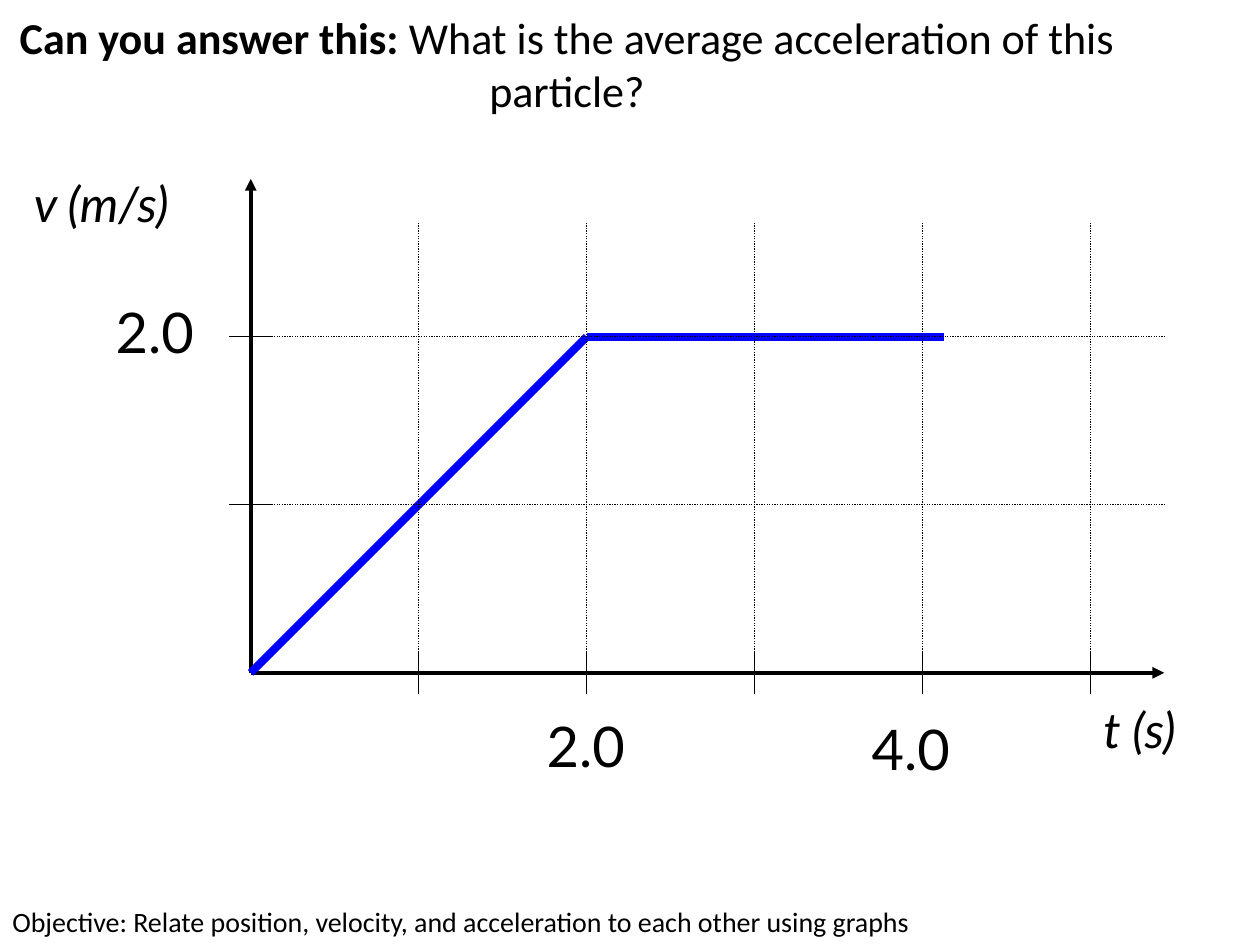
from lxml.etree import SubElement
from pptx import Presentation
from pptx.dml.color import RGBColor
from pptx.enum.dml import MSO_LINE_DASH_STYLE as Dash
from pptx.enum.shapes import MSO_CONNECTOR as Connector
from pptx.enum.text import MSO_ANCHOR as Anchor, PP_ALIGN as Align
from pptx.oxml.ns import qn
from pptx.util import Inches, Pt

COLORS = {"ink": "000000", "curve": "0000FF"}

ORIGIN_X, ORIGIN_Y = 1.99, 5.34
UNIT = 4 / 3
AXIS_RIGHT, AXIS_TOP, GRID_TOP = 9.24, 1.42, 1.76
TICK = 0.17

TICK_LABEL = {"name": "Lato", "size": Pt(32)}
AXIS_TITLE = {"name": "Lato", "size": Pt(28), "italic": True}
TITLE = {"name": "Calibri", "size": Pt(25.2)}
OBJECTIVE = {"name": "Calibri", "size": Pt(16)}


def time_x(seconds):
    return ORIGIN_X + seconds * UNIT


def velocity_y(speed):
    return ORIGIN_Y - speed * UNIT


def add_line(slide, start, end, color="ink", width=0.75, dash=None, arrow=False):
    line = slide.shapes.add_connector(
        Connector.STRAIGHT, *(Inches(value) for value in (*start, *end)))
    line.line.color.rgb = RGBColor.from_string(COLORS[color])
    line.line.width = Pt(width)
    if dash:
        line.line.dash_style = dash
    if arrow:
        SubElement(line.line._get_or_add_ln(), qn("a:tailEnd"), type="triangle")
    SubElement(line._element.spPr, qn("a:effectLst"))


def add_text(slide, box, runs, font, align=Align.LEFT, anchor=Anchor.TOP):
    """Add one paragraph; runs are pairs of text and extra font values."""
    shape = slide.shapes.add_textbox(*(Inches(value) for value in box))
    frame = shape.text_frame
    frame.word_wrap = True
    frame.vertical_anchor = anchor
    paragraph = frame.paragraphs[0]
    paragraph.alignment = align
    for text, extra in runs:
        run = paragraph.add_run()
        run.text = text
        for name, value in {**font, **extra}.items():
            setattr(run.font, name, value)
        run.font.color.rgb = RGBColor.from_string(COLORS["ink"])


def add_axes(slide):
    for end in ((ORIGIN_X, AXIS_TOP), (AXIS_RIGHT, ORIGIN_Y)):
        add_line(slide, (ORIGIN_X, ORIGIN_Y), end, width=2.25, arrow=True)


def add_ticks(slide):
    for speed in (1, 2):
        y = velocity_y(speed)
        add_line(slide, (ORIGIN_X - TICK, y), (ORIGIN_X + TICK, y))
    for seconds in range(1, 6):
        x = time_x(seconds)
        add_line(slide, (x, ORIGIN_Y - TICK), (x, ORIGIN_Y + TICK))


def add_labels(slide):
    for text, box, font in (
        ("v (m/s)", (0.17, 1.33, 1.47, 0.57), AXIS_TITLE),
        ("t (s)", (8.66, 5.5, 0.93, 0.57), AXIS_TITLE),
        ("2.0", (0.82, 2.31, 0.82, 0.63), TICK_LABEL),
        ("2.0", (4.24, 5.6, 0.82, 0.63), TICK_LABEL),
        ("4.0", (6.82, 5.62, 0.82, 0.63), TICK_LABEL),
    ):
        add_text(slide, box, [(text, {})], font)


def add_velocity_curve(slide):
    peak = (time_x(2), velocity_y(2))
    add_line(slide, (ORIGIN_X, ORIGIN_Y), peak, "curve", 4.5)
    add_line(slide, peak, (7.49, velocity_y(2)), "curve", 4.5)


def add_grid(slide):
    for speed in (2, 1):
        y = velocity_y(speed)
        add_line(slide, (ORIGIN_X, y), (AXIS_RIGHT, y), dash=Dash.ROUND_DOT)
    for seconds in range(1, 6):
        x = time_x(seconds)
        add_line(slide, (x, ORIGIN_Y), (x, GRID_TOP), dash=Dash.ROUND_DOT)


def main():
    presentation = Presentation()
    presentation.slide_width = Inches(10)
    presentation.slide_height = Inches(7.5)
    slide = presentation.slides.add_slide(presentation.slide_layouts[6])

    add_text(slide, (0, 0, 9, 1),
             [("Can you answer this: ", {"bold": True}),
              ("What is the average acceleration of this particle?", {})],
             TITLE, Align.CENTER, Anchor.MIDDLE)
    add_axes(slide)
    add_ticks(slide)
    add_labels(slide)
    add_velocity_curve(slide)
    add_grid(slide)
    add_text(slide, (0, 7.13, 10, 0.37),
             [("Objective: Relate position, velocity, and acceleration "
               "to each other using graphs", {})], OBJECTIVE)
    presentation.save("out.pptx")


if __name__ == "__main__":
    main()
